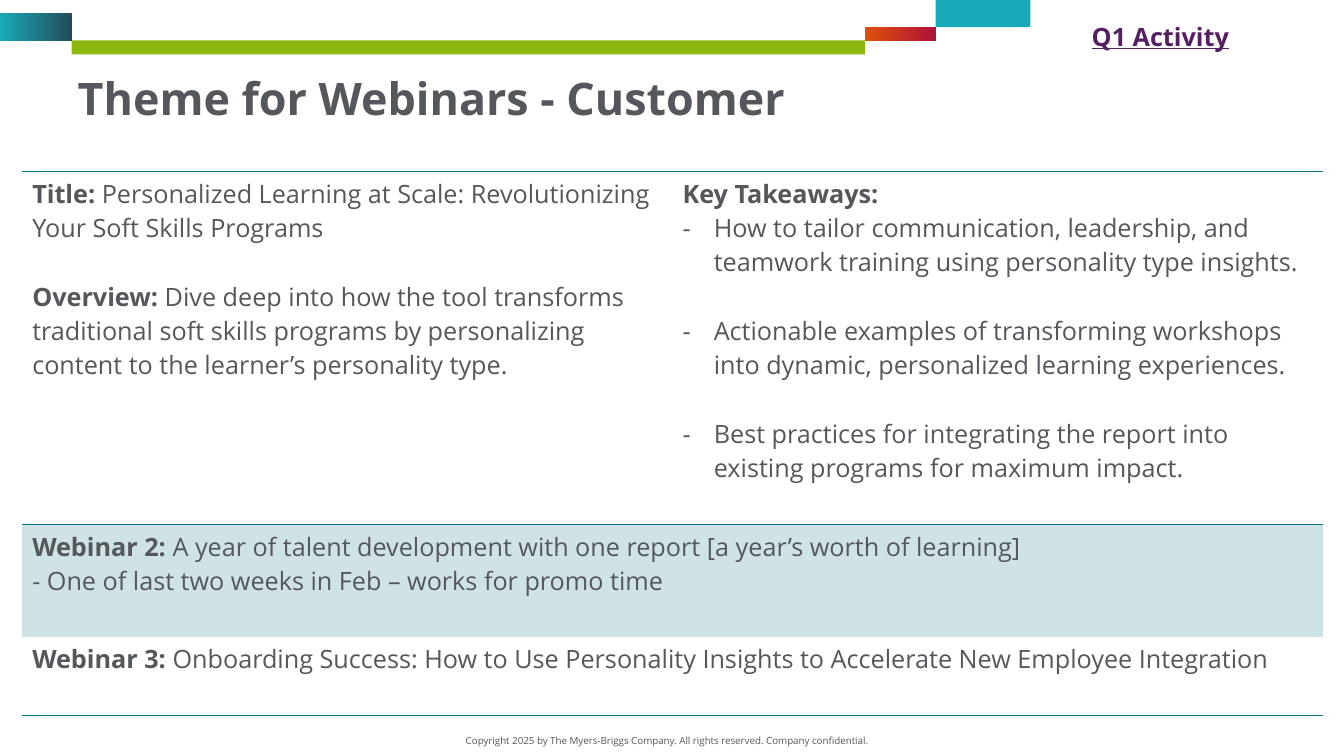
import pptx
import pptx.util
import pptx.dml.color
import pptx.enum.shapes
import pptx.enum.text
import pptx.oxml
import pptx.oxml.ns
from lxml import etree

Inches = pptx.util.Inches
Pt = pptx.util.Pt
RGB = pptx.dml.color.RGBColor.from_string
qn = pptx.oxml.ns.qn

COLORS = {"text": "54575B", "green": "8CB80F", "teal": "19AABA", "navy": "244C5A",
          "orange": "DC500A", "red": "AE1237", "rule": "117782", "purple": "552062"}


def add_run(p, text, size=18, color="text", **formats):
    r = p.add_run()
    r.text = text
    r.font.color.rgb = RGB(COLORS[color])
    for name, value in {"name": "Open Sans", "size": Pt(size), "bold": False, **formats}.items():
        setattr(r.font, name, value)


def set_borders(cell, ruled):
    """Draw a 1 pt rule on the named edges and clear the others."""
    tcPr = cell._tc.get_or_add_tcPr()
    for i, edge in enumerate(("lnL", "lnR", "lnT", "lnB")):
        ln = etree.Element(qn("a:" + edge), w=str(Pt(1)))
        if edge in ruled:
            fill = etree.SubElement(ln, qn("a:solidFill"))
            etree.SubElement(fill, qn("a:srgbClr"), val=COLORS["rule"])
        else:
            etree.SubElement(ln, qn("a:noFill"))
        tcPr.insert(i, ln)


prs = pptx.Presentation()
prs.slide_width, prs.slide_height = Inches(13.33), Inches(7.5)
s = prs.slides.add_slide(prs.slide_layouts[5])

# Header bars
bars = [
    (0.71, 0.4, 7.87, 0.14, ["green"]),
    (0, 0.13, 0.71, 0.28, ["teal", "navy"]),
    (9.28, 0, 0.94, 0.27, ["teal"]),
    (8.58, 0.27, 0.7, 0.14, ["orange", "red"]),
]
for x, y, w, h, colors in bars:
    sp = s.shapes.add_shape(pptx.enum.shapes.MSO_SHAPE.RECTANGLE,
                            Inches(x), Inches(y), Inches(w), Inches(h))
    sp.shadow.inherit = False
    sp.line.fill.background()
    if len(colors) == 1:
        sp.fill.solid()
        sp.fill.fore_color.rgb = RGB(COLORS[colors[0]])
    else:
        sp.fill.gradient()
        sp.fill.gradient_angle = 0
        for stop, color in zip(sp.fill.gradient_stops, colors):
            stop.color.rgb = RGB(COLORS[color])

# Title
title = s.shapes.title
title.left, title.top, title.width, title.height = map(Inches, (0.67, 0.71, 11.3, 0.99))
tf = title.text_frame
tf.vertical_anchor = pptx.enum.text.MSO_ANCHOR.TOP
tf.auto_size = pptx.enum.text.MSO_AUTO_SIZE.NONE
p = tf.paragraphs[0]
p.alignment = pptx.enum.text.PP_ALIGN.LEFT
p.line_spacing = 0.9
add_run(p, "Theme for Webinars - Customer", 32, bold=True)

# Webinar table: each paragraph is (space before, dash bullet, bold lead, text)
LINE = 24.5
rows = [
    (3.5, ("lnT", "lnB"), [
        [(0, False, "Title: ", "Personalized Learning at Scale: Revolutionizing Your Soft Skills Programs"),
         (LINE, False, "Overview:", " Dive deep into how the tool transforms traditional soft skills programs "
          "by personalizing content to the learner’s personality type.")],
        [(0, False, "Key Takeaways:", ""),
         (0, True, "", "How to tailor communication, leadership, and teamwork training using "
          "personality type insights."),
         (LINE, True, "", "Actionable examples of transforming workshops into dynamic, personalized "
          "learning experiences."),
         (LINE, True, "", "Best practices for integrating the report into existing programs for "
          "maximum impact.")],
    ]),
    (1.12, ("lnT",), [
        [(0, False, "Webinar 2:", " A year of talent development with one report [a year’s worth of learning]"),
         (0, False, "", "- One of last two weeks in Feb – works for promo time")],
    ]),
    (0.78, ("lnB",), [
        [(0, False, "Webinar 3: ", "Onboarding Success: How to Use Personality Insights to Accelerate "
          "New Employee Integration")],
    ]),
]
table = s.shapes.add_table(len(rows), 2, Inches(0.22), Inches(1.7), Inches(12.9), Inches(5.4)).table
table.first_row = table.horz_banding = False
for i, (height, ruled, cells) in enumerate(rows):
    table.rows[i].height = Inches(height)
    for j in range(2):
        table.cell(i, j).fill.background()
        set_borders(table.cell(i, j), ruled)
    if len(cells) == 1:
        table.cell(i, 0).merge(table.cell(i, 1))
    for j, paragraphs in enumerate(cells):
        tf = table.cell(i, j).text_frame
        for k, (before, dash, lead, text) in enumerate(paragraphs):
            p = tf.add_paragraph() if k else tf.paragraphs[0]
            if before:
                p.space_before = Pt(before)
            if dash:
                pPr = p._p.get_or_add_pPr()
                pPr.set("marL", str(Inches(0.31)))
                pPr.set("indent", str(-Inches(0.31)))
                etree.SubElement(pPr, qn("a:buFont"), typeface="Open Sans")
                etree.SubElement(pPr, qn("a:buChar"), char="-")
            if lead:
                add_run(p, lead, bold=True)
            if text:
                add_run(p, text)

tinted = table.cell(1, 0)
tinted.fill.solid()
tinted.fill.fore_color.rgb = RGB(COLORS["rule"])
tint = tinted._tc.tcPr.find(qn("a:solidFill")).find(qn("a:srgbClr"))
etree.SubElement(tint, qn("a:alpha"), val="20000")

# Quarter label and copyright line
labels = [
    (10.73, 0.16, 2.06, 0.4, "LEFT", "Q1 Activity",
     {"color": "purple", "bold": True, "underline": True}),
    (4.46, 7.24, 4.31, 0.22, "CENTER",
     "Copyright 2025 by The Myers-Briggs Company. All rights reserved. Company confidential.",
     {"size": 7}),
]
for x, y, w, h, align, text, formats in labels:
    tf = s.shapes.add_textbox(Inches(x), Inches(y), Inches(w), Inches(h)).text_frame
    tf.word_wrap = True
    p = tf.paragraphs[0]
    p.alignment = pptx.enum.text.PP_ALIGN[align]
    add_run(p, text, **formats)

prs.save("out.pptx")
